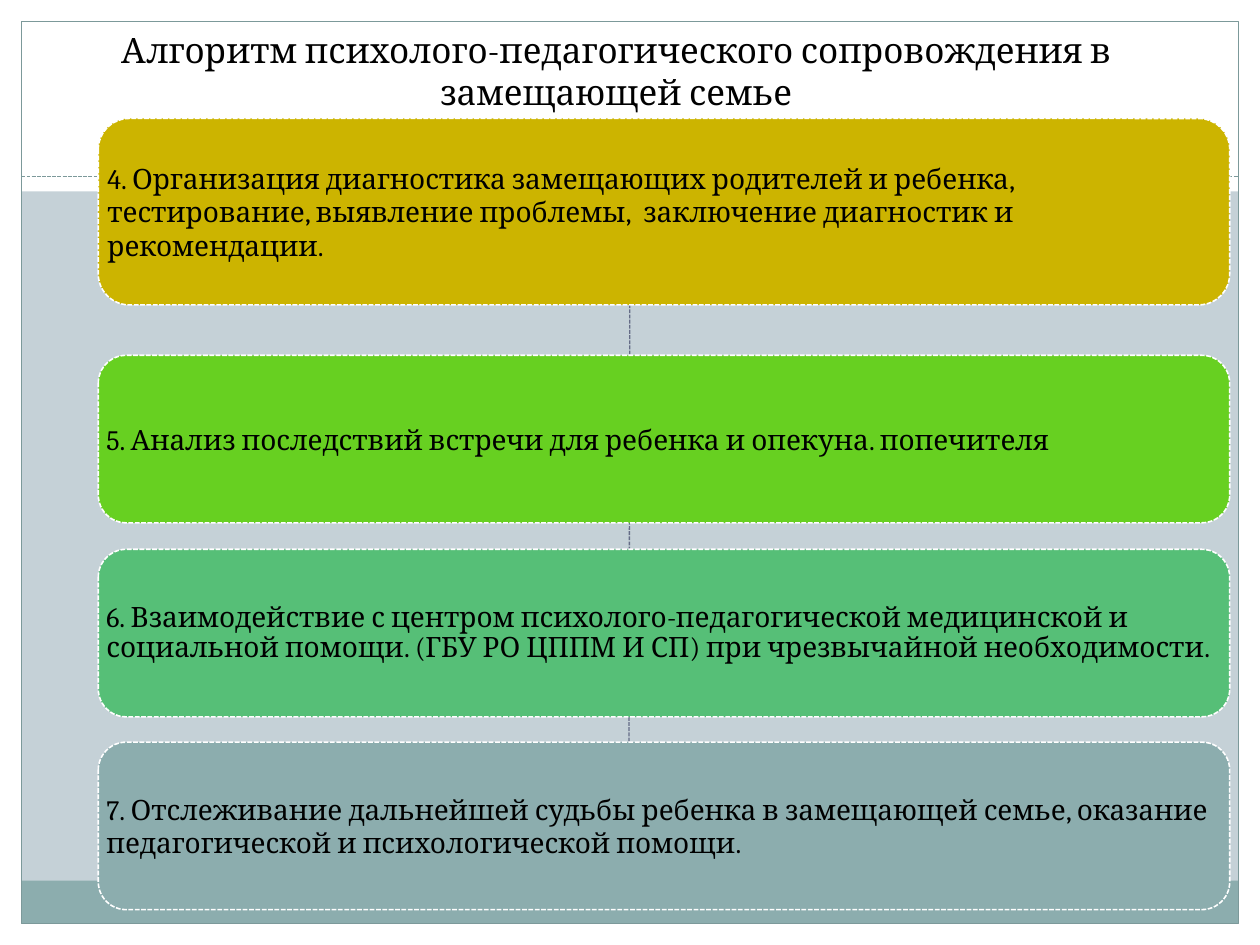
from dataclasses import dataclass

from pptx import Presentation
from pptx.dml.color import RGBColor
from pptx.enum.dml import MSO_LINE
from pptx.enum.shapes import MSO_CONNECTOR, MSO_SHAPE
from pptx.enum.text import MSO_ANCHOR, MSO_AUTO_SIZE, PP_ALIGN
from pptx.oxml.ns import qn
from pptx.util import Inches, Pt

RECT, ROUNDED = MSO_SHAPE.RECTANGLE, MSO_SHAPE.ROUNDED_RECTANGLE
STRAIGHT = MSO_CONNECTOR.STRAIGHT
DASH = MSO_LINE.SQUARE_DOT
MIDDLE, BOTTOM = MSO_ANCHOR.MIDDLE, MSO_ANCHOR.BOTTOM
LEFT, CENTER = PP_ALIGN.LEFT, PP_ALIGN.CENTER

FONT = "Cambria"
BLACK, WHITE, TEAL, FRAME = "000000", "FFFFFF", "8CADAE", "7C999A"
WIDTH, HEIGHT, MARGIN = 10, 7.5, 0.17
CARD_LEFT, CARD_WIDTH = 0.78, 8.98


@dataclass
class Band:
    left: float
    top: float
    width: float
    height: float
    fill: str | None = WHITE
    line: str | None = None


@dataclass
class Step:
    top: float
    height: float
    fill: str
    text: str
    line_spacing: float = 1.0


BANDS = [
    Band(0, HEIGHT - MARGIN, WIDTH, MARGIN),
    Band(0, 0, WIDTH, 1.52),
    Band(0, 0, MARGIN, HEIGHT),
    Band(WIDTH - MARGIN, 0, MARGIN, HEIGHT),
    Band(MARGIN, 6.99, WIDTH - 2 * MARGIN, 0.34, TEAL),
    Band(MARGIN, MARGIN, WIDTH - 2 * MARGIN, HEIGHT - 2 * MARGIN, None, FRAME),
]

STEPS = [
    Step(0.94, 1.48, "CCB400",
         "4. Организация диагностика замещающих родителей и ребенка, тестирование, "
         "выявление проблемы,\u00a0 заключение диагностик и рекомендации."),
    Step(2.82, 1.33, "67D021",
         "5. Анализ последствий встречи для ребенка и опекуна. попечителя"),
    Step(4.36, 1.33, "56BF77",
         "6. Взаимодействие с центром психолого-педагогической медицинской и социальной "
         "помощи. (ГБУ РО ЦППМ И СП) при чрезвычайной необходимости.", 0.9),
    Step(5.89, 1.33, TEAL,
         "7. Отслеживание дальнейшей судьбы ребенка в замещающей семье, оказание "
         "педагогической и психологической помощи."),
]


def rgb(color: str) -> RGBColor:
    return RGBColor.from_string(color)


def style_line(line, color: str, width: float, dash=None) -> None:
    line.color.rgb = rgb(color)
    line.width = Pt(width)
    if dash is not None:
        line.dash_style = dash


def write(tf, text: str, size: float, align, anchor):
    tf.word_wrap = True
    tf.auto_size = MSO_AUTO_SIZE.NONE
    tf.vertical_anchor = anchor
    tf.text = text
    p = tf.paragraphs[0]
    p.alignment = align
    font = p.runs[0].font
    font.name, font.size, font.color.rgb = FONT, Pt(size), rgb(BLACK)
    return p


def add_band(s, band: Band) -> None:
    sp = s.shapes.add_shape(RECT, Inches(band.left), Inches(band.top),
                            Inches(band.width), Inches(band.height))
    sp.shadow.inherit = False
    if band.fill:
        sp.fill.solid()
        sp.fill.fore_color.rgb = rgb(band.fill)
    else:
        sp.fill.background()
    if band.line:
        style_line(sp.line, band.line, 0.75)
    else:
        sp.line.fill.background()


def add_dashed_line(s, x1: float, y1: float, x2: float, y2: float, color: str) -> None:
    cx = s.shapes.add_connector(STRAIGHT, Inches(x1), Inches(y1), Inches(x2), Inches(y2))
    style_line(cx.line, color, 0.75, DASH)
    sp_pr = cx._element.spPr
    sp_pr.append(sp_pr.makeelement(qn("a:effectLst"), {}))


def add_step(s, step: Step) -> None:
    sp = s.shapes.add_shape(ROUNDED, Inches(CARD_LEFT), Inches(step.top),
                            Inches(CARD_WIDTH), Inches(step.height))
    sp.shadow.inherit = False
    sp.fill.solid()
    sp.fill.fore_color.rgb = rgb(step.fill)
    style_line(sp.line, WHITE, 0.9, DASH)
    tf = sp.text_frame
    # The rounded corners already inset the text.
    tf.margin_left = tf.margin_right = tf.margin_top = tf.margin_bottom = 0
    p = write(tf, step.text, 16, LEFT, MIDDLE)
    p.line_spacing = step.line_spacing


def add_title(s, text: str) -> None:
    title = s.shapes.title
    title.left, title.top = Inches(0.28), Inches(0)
    title.width, title.height = Inches(9.22), Inches(0.94)
    write(title.text_frame, text, 20, CENTER, BOTTOM)
    s.shapes._spTree.append(title._element)  # bring in front of the bands


def main() -> None:
    prs = Presentation()
    prs.slide_width, prs.slide_height = Inches(WIDTH), Inches(HEIGHT)
    s = prs.slides.add_slide(prs.slide_layouts[5])
    s.background.fill.solid()
    s.background.fill.fore_color.rgb = rgb("C5D1D7")

    for band in BANDS:
        add_band(s, band)
    add_dashed_line(s, MARGIN, 1.4, WIDTH - MARGIN, 1.4, FRAME)
    add_dashed_line(s, 4.99, 6.99, 5, 1.72, "646B86")
    for step in STEPS:
        add_step(s, step)
    add_title(s, "Алгоритм психолого-педагогического сопровождения в замещающей семье")

    prs.save("out.pptx")


if __name__ == "__main__":
    main()
